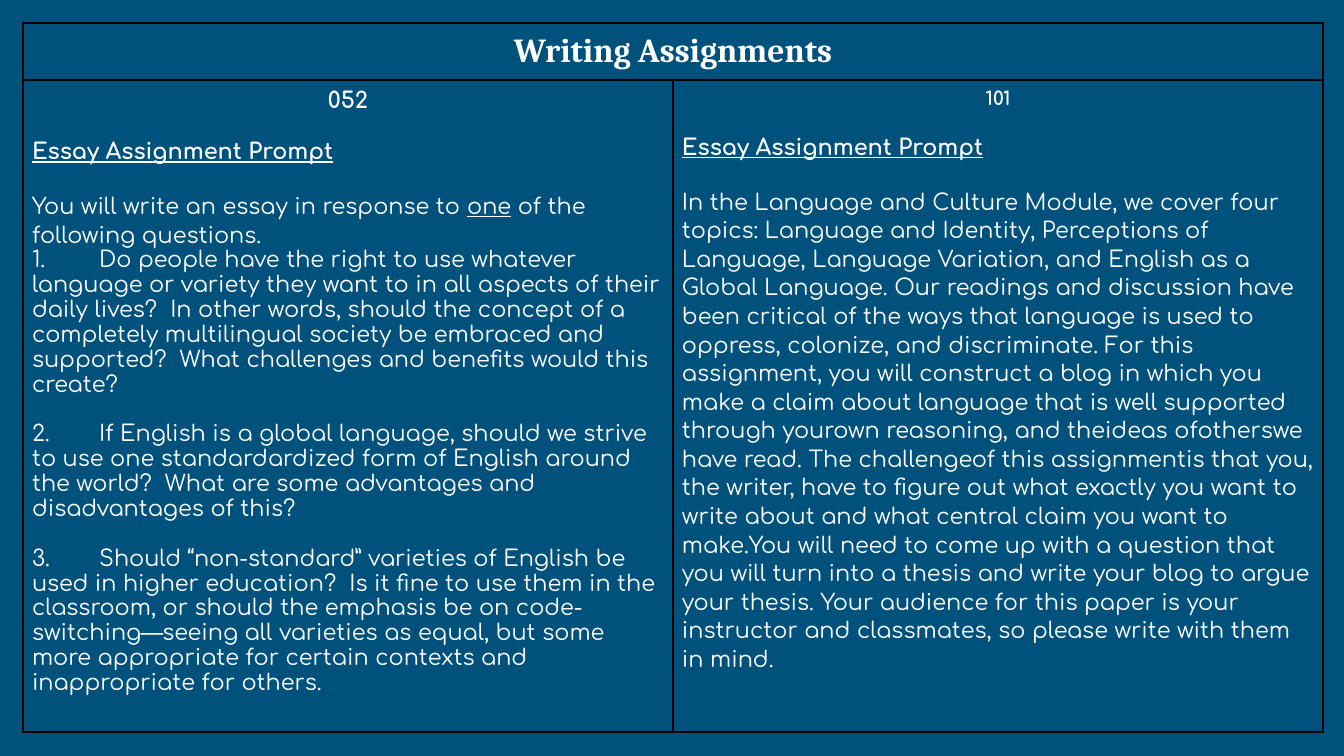
"""Build a slide with a two-column table of writing assignments."""
from lxml import etree
from pptx import Presentation
from pptx.dml.color import RGBColor
from pptx.enum.text import PP_ALIGN
from pptx.oxml.ns import qn
from pptx.util import Pt

CENTER, LEFT = PP_ALIGN.CENTER, PP_ALIGN.LEFT
PX = 9144000 / 1344
COLORS = {"back": "00517C", "text": "FFFFFF", "line": "000000"}
EDGE, PAD = 23, 9
COLS, ROWS = [650, 650], [57, 652]

STYLES = {
    "title": dict(size=18, font="Cambria", bold=True, align=CENTER),
    "code": dict(size=12, bold=True, align=CENTER),
    "small": dict(size=10, bold=True, align=CENTER),
    "head": dict(size=12, bold=True, before=14),
    "intro": dict(size=12, before=14, lines=1.15),
    "first": dict(size=12),
    "next": dict(size=12, before=13.3),
}

TITLE = [("title", "Writing Assignments")]
HEAD = ("head", "_Essay Assignment Prompt_")
ESSAY = [
    ("code", "052"),
    HEAD,
    ("intro", "You will write an essay in response to _one_ of the following questions."),
    ("first", "1. \tDo people have the right to use whatever language or variety they "
     "want to in all aspects of their daily lives?  In other words, should the concept "
     "of a completely multilingual society be embraced and supported?  What challenges "
     "and benefits would this create?"),
    ("next", "2. \tIf English is a global language, should we strive to use one "
     "standardardized form of English around the world?  What are some advantages and "
     "disadvantages of this?"),
    ("next", "3. \tShould “non-standard” varieties of English be used in higher "
     "education?  Is it fine to use them in the classroom, or should the emphasis be on "
     "code-switching—seeing all varieties as equal, but some more appropriate for "
     "certain contexts and inappropriate for others."),
]
TASK = [
    "In the Language and Culture Module, we cover four topics: Language and Identity, "
    "Perceptions of Language, Language Variation, and English as a Global Language.",
    "Our readings and discussion have been critical of the ways that language is used "
    "to oppress, colonize, and discriminate.",
    "For this assignment, you will construct a blog in which you make a claim about "
    "language that is well supported through yourown reasoning, and theideas "
    "ofotherswe have read.",
    "The challengeof this assignmentis that you, the writer, have to figure out what "
    "exactly you want to write about and what central claim you want to make.You will "
    "need to come up with a question that you will turn into a thesis and write your "
    "blog to argue your thesis.",
    "Your audience for this paper is your instructor and classmates, so please write "
    "with them in mind.",
]
BLOG = [("small", "101"), HEAD, ("intro", " ".join(TASK))]


def px(n):
    return round(n * PX)


def write(para, text, size, font="Comfortaa", bold=False, align=LEFT, before=0, lines=1.0):
    para.alignment = align
    para.space_before = Pt(before)
    para.line_spacing = lines
    for i, part in enumerate(text.split("_")):
        if part:
            run = para.add_run()
            run.text = part
            run.font.size = Pt(size)
            run.font.name = font
            run.font.bold = bold
            run.font.underline = i % 2 == 1
            run.font.color.rgb = RGBColor.from_string(COLORS["text"])


def frame(cell):
    cell.fill.background()
    cell.margin_left = cell.margin_right = px(PAD)
    cell.margin_top = cell.margin_bottom = px(PAD)
    props = cell._tc.get_or_add_tcPr()
    for i, side in enumerate(("a:lnL", "a:lnR", "a:lnT", "a:lnB")):
        line = etree.Element(qn(side), w=str(Pt(1)))
        fill = etree.SubElement(line, qn("a:solidFill"))
        etree.SubElement(fill, qn("a:srgbClr"), val=COLORS["line"])
        props.insert(i, line)


def fill_cell(cell, items):
    body = cell.text_frame
    for i, (style, text) in enumerate(items):
        para = body.add_paragraph() if i else body.paragraphs[0]
        write(para, text, **STYLES[style])


def main():
    deck = Presentation()
    deck.slide_width, deck.slide_height = px(1344), px(756)
    slide = deck.slides.add_slide(deck.slide_layouts[6])
    back = slide.background.fill
    back.solid()
    back.fore_color.rgb = RGBColor.from_string(COLORS["back"])

    table = slide.shapes.add_table(
        len(ROWS), len(COLS), px(EDGE), px(EDGE), px(sum(COLS)), px(sum(ROWS))
    ).table
    table.first_row = table.horz_banding = False
    for col, wide in zip(table.columns, COLS):
        col.width = px(wide)
    for row, high in zip(table.rows, ROWS):
        row.height = px(high)
    for cell in table.iter_cells():
        frame(cell)
    table.cell(0, 0).merge(table.cell(0, 1))

    for spot, items in (((0, 0), TITLE), ((1, 0), ESSAY), ((1, 1), BLOG)):
        fill_cell(table.cell(*spot), items)
    deck.save("out.pptx")


if __name__ == "__main__":
    main()
